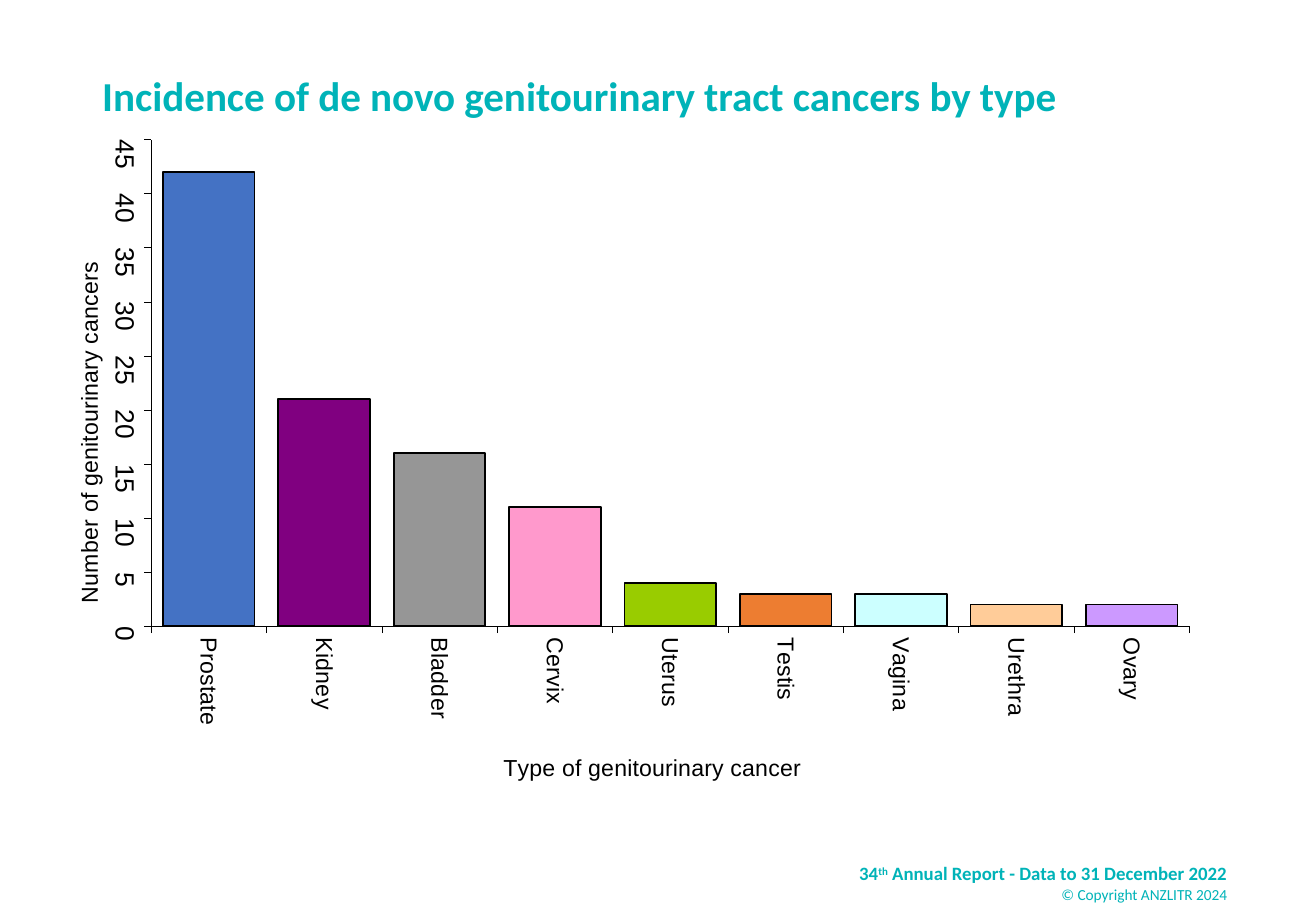
from lxml import etree
from pptx import Presentation
from pptx.chart.data import CategoryChartData
from pptx.dml.color import RGBColor
from pptx.enum.chart import XL_CHART_TYPE as CT, XL_TICK_MARK as TM
from pptx.enum.text import MSO_ANCHOR as ANCHOR, PP_ALIGN as ALIGN
from pptx.oxml.ns import qn
from pptx.util import Pt

TEAL, BLACK = "00B3B8", "000000"
CANCERS = [
    ("Prostate", 42, "4472C4"),
    ("Kidney", 21, "800080"),
    ("Bladder", 16, "969696"),
    ("Cervix", 11, "FF99CC"),
    ("Uterus", 4, "99CC00"),
    ("Testis", 3, "ED7D31"),
    ("Vagina", 3, "CCFFFF"),
    ("Urethra", 2, "FFCC99"),
    ("Ovary", 2, "CC99FF"),
]


def rgb(code):
    """Turn a hex string into a colour."""
    return RGBColor.from_string(code)


def set_font(font, name, size, color, bold=False):
    """Set the typeface, size, colour and weight of a font."""
    font.name, font.size, font.bold = name, Pt(size), bold
    font.color.rgb = rgb(color)


def set_layout(parent, index, **values):
    """Give a chart part a manual layout, as fractions of the chart."""
    for old in parent.findall(qn("c:layout")):
        parent.remove(old)
    layout = etree.Element(qn("c:layout"))
    manual = etree.SubElement(layout, qn("c:manualLayout"))
    for tag, value in values.items():
        etree.SubElement(manual, qn(f"c:{tag}")).set("val", str(value))
    parent.insert(index, layout)


def turn(parent, degrees):
    """Rotate the text of a chart part."""
    body = next(parent.iter(qn("a:bodyPr")))
    body.set("rot", str(degrees * 60000))
    body.set("vert", "horz")


def format_axis(axis, title, size, angle, x, y):
    """Style an axis with its labels, and put its title at x, y."""
    axis.has_major_gridlines = False
    axis.major_tick_mark, axis.minor_tick_mark = TM.OUTSIDE, TM.NONE
    axis.format.line.color.rgb = rgb(BLACK)
    axis.format.line.width = Pt(0.25)
    set_font(axis.tick_labels.font, "Arial", size, BLACK)
    turn(axis._element.find(qn("c:txPr")), 90)
    tf = axis.axis_title.text_frame
    tf.text = title
    set_font(tf.paragraphs[0].font, "Arial", 14, BLACK)
    title_xml = axis.axis_title._element
    turn(title_xml, angle)
    set_layout(title_xml, 1, xMode="edge", yMode="edge", x=x, y=y)


def add_title(s, x, y, w, h):
    """Place and format the slide title."""
    sp = s.shapes.title
    sp.left, sp.top, sp.width, sp.height = Pt(x), Pt(y), Pt(w), Pt(h)
    tf = sp.text_frame
    tf.text = "Incidence of de novo genitourinary tract cancers by type"
    tf.vertical_anchor = ANCHOR.MIDDLE
    p = tf.paragraphs[0]
    p.alignment, p.line_spacing = ALIGN.LEFT, 0.9
    set_font(p.font, "Calibri", 24.9, TEAL, True)


def add_cancer_chart(s, x, y, w, h):
    """Draw the column chart of cancers by type."""
    names, counts, colors = zip(*CANCERS)
    data = CategoryChartData(number_format="0")
    data.categories = names
    data.add_series("Series 1", counts)
    chart = s.shapes.add_chart(CT.COLUMN_CLUSTERED, Pt(x), Pt(y), Pt(w), Pt(h), data).chart
    chart.has_legend = chart.has_title = False
    set_font(chart.font, "Arial", 14, BLACK)
    plot = chart.plots[0]
    plot.gap_width, plot.vary_by_categories = 26, False
    for i, color in enumerate(colors):
        fmt = plot.series[0].points[i].format
        fmt.fill.solid()
        fmt.fill.fore_color.rgb = rgb(color)
        fmt.line.color.rgb = rgb(BLACK)
        fmt.line.width = Pt(1.05)
    format_axis(chart.category_axis, "Type of genitourinary cancer", 14, 0, 0.38, 0.92)
    val = chart.value_axis
    val.minimum_scale, val.maximum_scale, val.major_unit = 0, 45, 5
    format_axis(val, "Number of genitourinary cancers", 16, -90, 0.01, 0.2)
    area = chart._chartSpace.find(f".//{qn('c:plotArea')}")
    set_layout(area, 0, layoutTarget="inner", xMode="edge", yMode="edge",
               x=0.08, y=0.027, w=0.895, h=0.714)


def add_footer(s, x, y, w, h):
    """Write the report name and the copyright line."""
    tf = s.shapes.add_textbox(Pt(x), Pt(y), Pt(w), Pt(h)).text_frame
    tf.word_wrap = True
    report, notice = tf.paragraphs[0], tf.add_paragraph()
    for text in ("34", "th", " Annual Report - Data to 31 December 2022"):
        report.add_run().text = text
    report.runs[1]._r.get_or_add_rPr().set("baseline", "30000")
    notice.text = "© Copyright ANZLITR 2024"
    for p, size, bold in ((report, 11.4, True), (notice, 9.3, False)):
        p.alignment = ALIGN.RIGHT
        set_font(p.font, "Calibri", size, TEAL, bold)


def main():
    """Build the slide and save it."""
    prs = Presentation()
    prs.slide_width, prs.slide_height = Pt(797), Pt(559.4)
    s = prs.slides.add_slide(prs.slide_layouts[5])
    add_footer(s, 481.7, 518.4, 268.6, 29.5)
    add_cancer_chart(s, 35.3, 73.4, 702.7, 412.6)
    add_title(s, 54.7, 20.2, 686.9, 78.5)
    prs.save("out.pptx")


if __name__ == "__main__":
    main()
